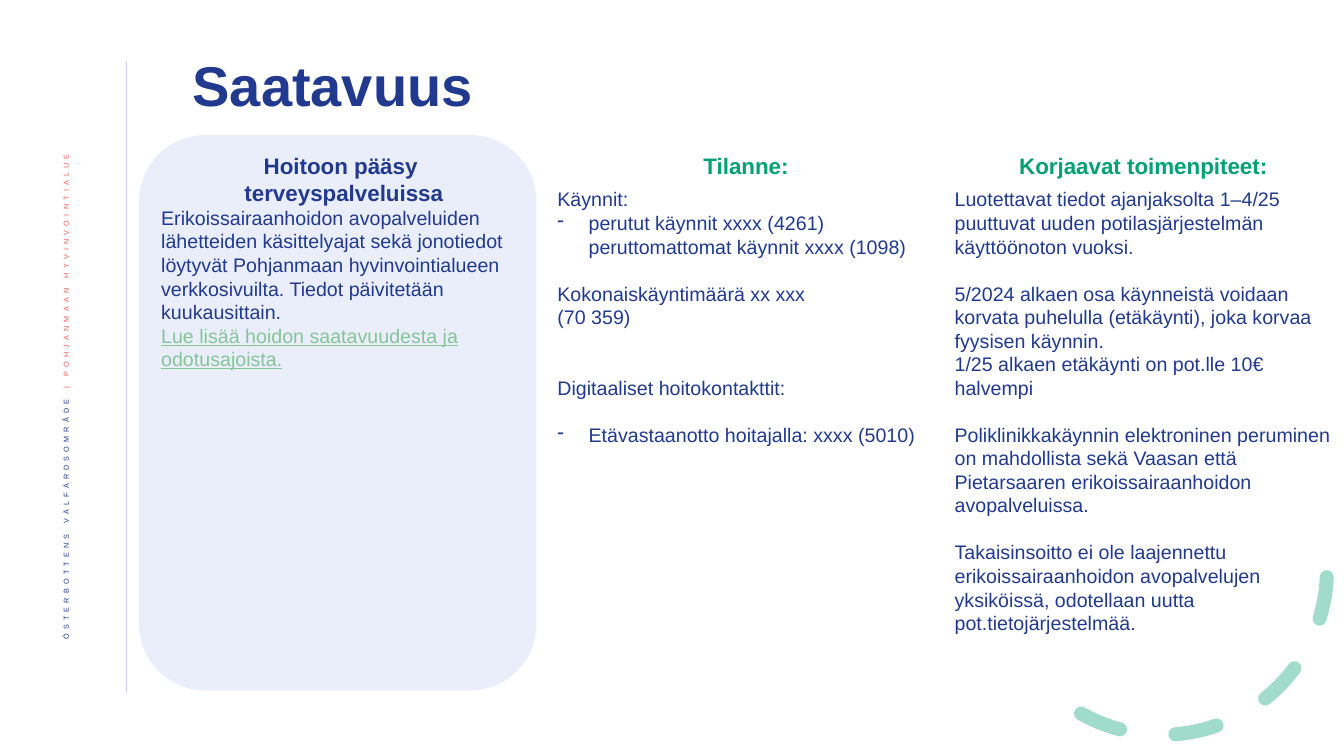
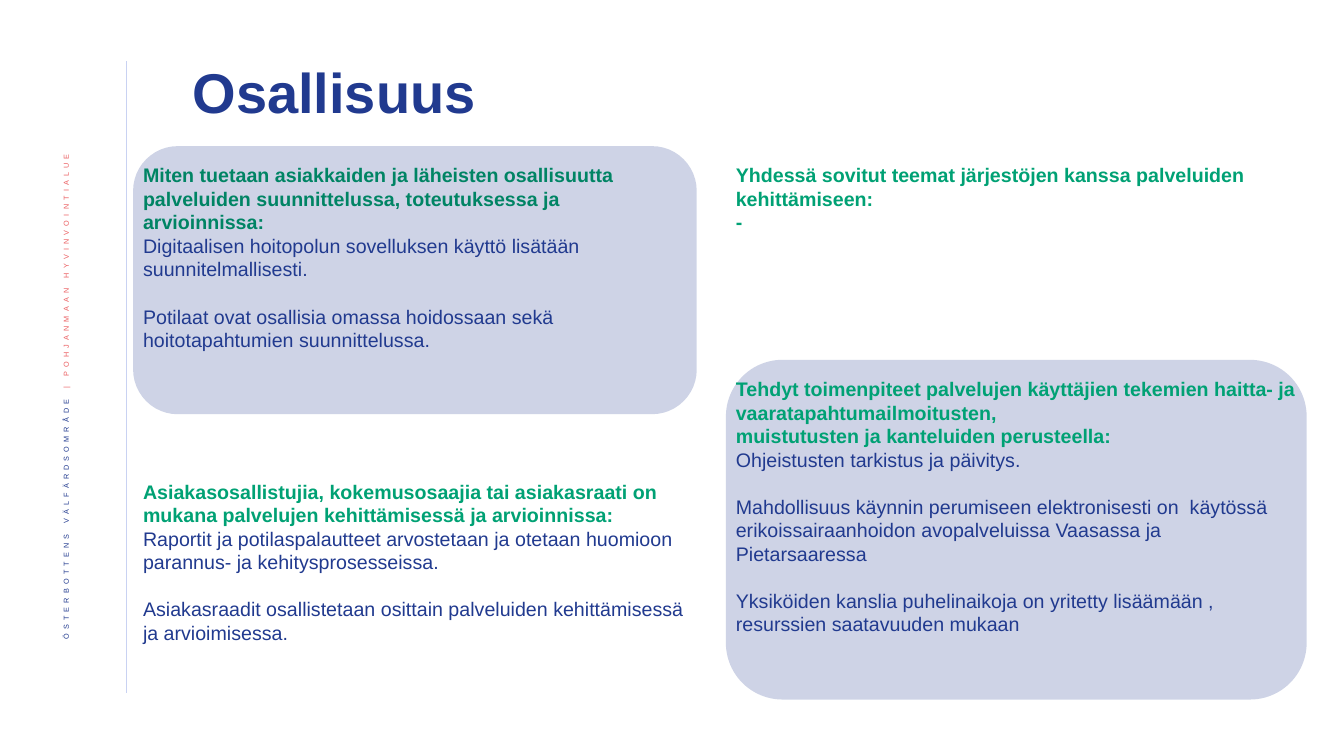
"""Build two slides on access to care and on participation."""
from lxml import etree
from pptx import Presentation
from pptx.dml.color import RGBColor
from pptx.enum import dml, shapes, text
from pptx.oxml import ns
from pptx.util import Inches, Pt

NAVY = RGBColor(0x21, 0x3A, 0x8F)
GREEN = RGBColor(0x00, 0xA1, 0x74)
DARK = RGBColor(0x00, 0x84, 0x64)
LIGHT = RGBColor(0x85, 0xC5, 0x98)
CORAL = RGBColor(0xEB, 0x5C, 0x5F)
PALE = RGBColor(0xC9, 0xD2, 0xF2)

LEFT, RIGHT, MID = text.PP_ALIGN.LEFT, text.PP_ALIGN.RIGHT, text.PP_ALIGN.CENTER
GAP = 16.8
LOOKS = {
    "title": ({"size": Pt(40), "bold": True}, NAVY, {"alignment": LEFT, "line_spacing": 0.9}),
    "top": ({"size": Pt(16), "bold": True}, NAVY, {"alignment": MID}),
    "head": ({"size": Pt(16), "bold": True}, GREEN, {"alignment": MID, "space_after": Pt(6)}),
    "lead": ({"size": Pt(14), "bold": True}, GREEN, {"alignment": LEFT}),
    "deep": ({"size": Pt(14), "bold": True}, DARK, {"alignment": LEFT}),
    "body": ({"size": Pt(14), "bold": False}, NAVY, {"alignment": LEFT}),
    "dash": ({"size": Pt(14), "bold": False}, NAVY, {"alignment": LEFT}),
    "more": ({"size": Pt(14), "underline": True}, LIGHT, {"alignment": LEFT}),
}

PAGES = [
    {
        "title": ("Saatavuus", (1.81, 0.45, 10.2, 0.85)),
        "arc": True,
        "cards": [(1.38, 1.34, 3.94, 5.51, PALE, 38)],
        "texts": [
            ((1.5, 1.46, 3.82, 2.29), [
                ("top", "Hoitoon pääsy ", 0),
                ("top", "terveyspalveluissa", 0),
                ("body", "Erikoissairaanhoidon avopalveluiden lähetteiden käsittelyajat sekä "
                 "jonotiedot löytyvät Pohjanmaan hyvinvointialueen verkkosivuilta. "
                 "Tiedot päivitetään kuukausittain.", 0),
                ("more", "Lue lisää hoidon saatavuudesta ja odotusajoista.", 0),
            ]),
            ((5.43, 1.46, 3.94, 3.05), [
                ("head", "Tilanne:", 0),
                ("body", "Käynnit:", 0),
                ("dash", "perutut käynnit xxxx (4261) peruttomattomat käynnit xxxx (1098)", 0),
                ("body", "Kokonaiskäyntimäärä xx xxx", GAP),
                ("body", "(70 359)", 0),
                ("body", "Digitaaliset hoitokontakttit:", 2 * GAP),
                ("dash", "Etävastaanotto hoitajalla: xxxx (5010)", GAP),
            ]),
            ((9.37, 1.46, 3.94, 5.23), [
                ("head", "Korjaavat toimenpiteet:", 0),
                ("body", "Luotettavat tiedot ajanjaksolta 1–4/25 puuttuvat uuden "
                 "potilasjärjestelmän käyttöönoton vuoksi.", 0),
                ("body", "5/2024 alkaen osa käynneistä voidaan korvata puhelulla "
                 "(etäkäynti), joka korvaa fyysisen käynnin.", GAP),
                ("body", "1/25 alkaen etäkäynti on pot.lle 10€ halvempi", 0),
                ("body", "Poliklinikkakäynnin elektroninen peruminen on mahdollista sekä "
                 "Vaasan että Pietarsaaren erikoissairaanhoidon avopalveluissa.", GAP),
                ("body", "Takaisinsoitto ei ole laajennettu erikoissairaanhoidon "
                 "avopalvelujen yksiköissä, odotellaan uutta pot.tietojärjestelmää.", GAP),
            ]),
        ],
    },
    {
        "title": ("Osallisuus", (1.81, 0.45, 9.98, 0.99)),
        "arc": False,
        "cards": [(1.32, 1.45, 5.59, 2.66, NAVY, 22), (7.2, 3.57, 5.76, 3.37, NAVY, 22)],
        "texts": [
            ((1.32, 1.57, 5.59, 1.99), [
                ("deep", "Miten tuetaan asiakkaiden ja läheisten osallisuutta palveluiden "
                 "suunnittelussa, toteutuksessa ja arvioinnissa:", 0),
                ("body", "Digitaalisen hoitopolun sovelluksen käyttö lisätään "
                 "suunnitelmallisesti.", 0),
                ("body", "Potilaat ovat osallisia omassa hoidossaan sekä "
                 "hoitotapahtumien suunnittelussa.", GAP),
            ]),
            ((7.2, 1.57, 5.76, 0.81), [
                ("lead", "Yhdessä sovitut teemat järjestöjen kanssa palveluiden kehittämiseen:", 0),
                ("lead", "-", 0),
            ]),
            ((1.32, 4.71, 5.59, 2.22), [
                ("lead", "Asiakasosallistujia, kokemusosaajia tai asiakasraati on mukana "
                 "palvelujen kehittämisessä ja arvioinnissa:", 0),
                ("body", "Raportit ja potilaspalautteet arvostetaan ja otetaan huomioon "
                 "parannus- ja kehitysprosesseissa.", 0),
                ("body", "Asiakasraadit osallistetaan osittain palveluiden "
                 "kehittämisessä ja arvioimisessa.", GAP),
            ]),
            ((7.2, 3.69, 5.76, 2.69), [
                ("lead", "Tehdyt toimenpiteet palvelujen käyttäjien tekemien haitta- ja "
                 "vaaratapahtumailmoitusten,", 0),
                ("lead", "muistutusten ja kanteluiden perusteella:", 0),
                ("body", "Ohjeistusten tarkistus ja päivitys.", 0),
                ("body", "Mahdollisuus käynnin perumiseen elektronisesti on  käytössä "
                 "erikoissairaanhoidon avopalveluissa Vaasassa ja Pietarsaaressa", GAP),
                ("body", "Yksiköiden kanslia puhelinaikoja on yritetty lisäämään , "
                 "resurssien saatavuuden mukaan", GAP),
            ]),
        ],
    },
]


def fade(shape, share):
    """Make the colours of a shape see-through."""
    shape.shadow.inherit = False
    for node in shape._element.spPr.iter(ns.qn("a:srgbClr")):
        etree.SubElement(node, ns.qn("a:alpha")).set("val", str(share * 1000))


def write(frame, items):
    """Fill a text frame with styled paragraphs."""
    frame.word_wrap = True
    frame.auto_size = text.MSO_AUTO_SIZE.NONE
    for num, (look, words, before) in enumerate(items):
        par = frame.add_paragraph() if num else frame.paragraphs[0]
        font, tint, form = LOOKS[look]
        if look == "dash":
            props = par._p.get_or_add_pPr()
            props.set("marL", str(Inches(0.31)))
            props.set("indent", str(-Inches(0.31)))
            etree.SubElement(props, ns.qn("a:buChar")).set("char", "-")
        for key, val in form.items():
            setattr(par, key, val)
        if before:
            par.space_before = Pt(before)
        run = par.add_run()
        run.text = words
        for key, val in {"name": "Arial", **font}.items():
            setattr(run.font, key, val)
        run.font.color.rgb = tint


deck = Presentation()
deck.slide_width, deck.slide_height = Inches(13.33), Inches(7.5)

for page in PAGES:
    slide = deck.slides.add_slide(deck.slide_layouts[5])
    pool = slide.shapes

    rule = pool.add_connector(shapes.MSO_CONNECTOR.STRAIGHT,
                              Inches(1.25), Inches(0.61), Inches(1.25), Inches(6.88))
    rule.line.color.rgb = PALE
    rule.line.width = Pt(0.5)
    etree.SubElement(rule._element.spPr, ns.qn("a:effectLst"))

    side = pool.add_textbox(Inches(0.42), Inches(1.37), Inches(0.52), Inches(5.73)).text_frame
    side.word_wrap = True
    side.vertical_anchor = text.MSO_ANCHOR.MIDDLE
    side._txBody.bodyPr.set("vert", "vert270")
    line = side.paragraphs[0]
    line.alignment, line.line_spacing = RIGHT, 0.9
    for words, tint in (("ÖSTERBOTTENS VÄLFÄRDSOMRÅDE ", NAVY),
                        ("| POHJANMAAN HYVINVOINTIALUE ", CORAL)):
        run = line.add_run()
        run.text = words
        run.font.name, run.font.size = "Arial", Pt(9)
        run.font.color.rgb = tint
        for key, val in {"baseline": "30000", "spc": "300"}.items():
            run._r.get_or_add_rPr().set(key, val)

    if page["arc"]:
        arc = pool.add_shape(shapes.MSO_SHAPE.ARC, Inches(9.89), Inches(4.02),
                             Inches(3.27), Inches(3.27))
        arc.adjustments[0], arc.adjustments[1] = 158.17, 17.81
        arc.rotation = 98.9
        arc.fill.background()
        arc.line.color.rgb = GREEN
        arc.line.width = Pt(10)
        arc.line.dash_style = dml.MSO_LINE.DASH
        arc._element.spPr.find(ns.qn("a:ln")).set("cap", "rnd")
        fade(arc, 36)

    words, place = page["title"]
    title = pool.title
    title.left, title.top, title.width, title.height = map(Inches, place)
    title.text_frame.vertical_anchor = text.MSO_ANCHOR.MIDDLE
    write(title.text_frame, [("title", words, 0)])

    for *place, tint, share in page["cards"]:
        card = pool.add_shape(shapes.MSO_SHAPE.ROUNDED_RECTANGLE, *map(Inches, place))
        card.fill.solid()
        card.fill.fore_color.rgb = tint
        card.line.fill.background()
        fade(card, share)

    for place, items in page["texts"]:
        write(pool.add_textbox(*map(Inches, place)).text_frame, items)

deck.save("out.pptx")
